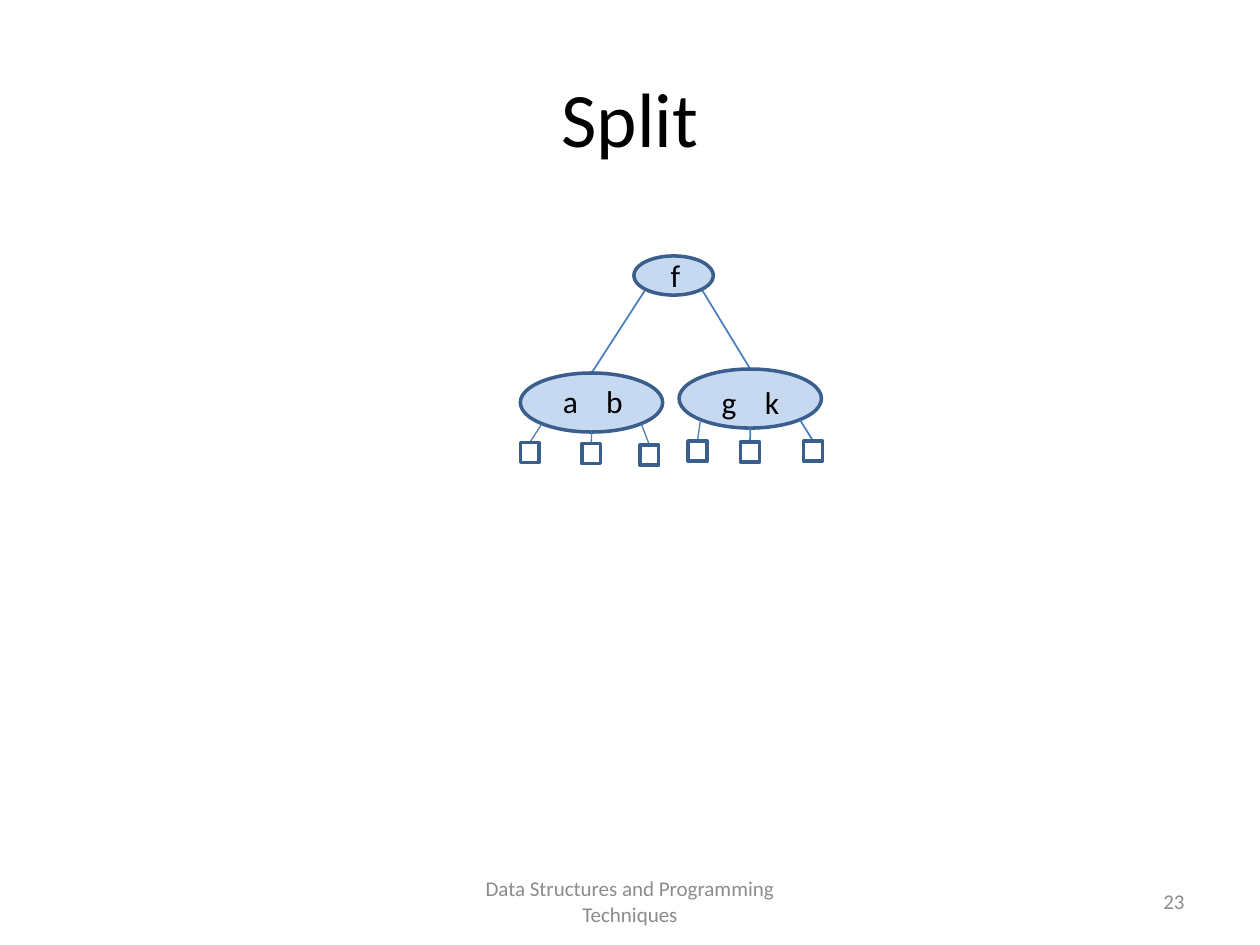
import pptx
import pptx.util
import pptx.dml.color
import pptx.enum.shapes
import pptx.enum.text
import pptx.oxml
import pptx.oxml.ns

Cm = pptx.util.Cm
Pt = pptx.util.Pt
Kind = pptx.enum.shapes.MSO_SHAPE
Side = pptx.enum.text.PP_ALIGN
Mid = pptx.enum.text.MSO_ANCHOR
FILL, RIM, EDGE, GREY = "C6D9F1", "3A5F8C", "4B7EBC", "8C8C8C"
LEAF_W, LEAF_H = 0.38, 0.41
NODE_W, NODE_H = 2.87, 1.19


def color(code):
    """Turn a hex string into a colour."""
    return pptx.dml.color.RGBColor.from_string(code)


def write(slide, text, box, size=18, ink="000000", align=Side.CENTER,
          anchor=Mid.TOP, inset=0.25, tab=None):
    """Place formatted text in a box, with an optional tab stop."""
    frame = slide.shapes.add_textbox(*map(Cm, box)).text_frame
    frame.word_wrap = True
    frame.vertical_anchor = anchor
    frame.margin_left = Cm(inset)
    para = frame.paragraphs[0]
    para.alignment = align
    run = para.add_run()
    run.text = text
    run.font.name = "Calibri"
    run.font.size = Pt(size)
    run.font.color.rgb = color(ink)
    if tab:
        space = pptx.oxml.ns.nsdecls("a")
        stops = f'<a:tabLst {space}><a:tab pos="{Cm(tab)}" algn="l"/></a:tabLst>'
        para._p.get_or_add_pPr().append(pptx.oxml.parse_xml(stops))


def shape(slide, kind, box, fill=None):
    """Draw an outlined shape."""
    item = slide.shapes.add_shape(kind, *map(Cm, box))
    item.shadow.inherit = False
    if fill:
        item.fill.solid()
        item.fill.fore_color.rgb = color(fill)
    else:
        item.fill.background()
    item.line.color.rgb = color(RIM)
    item.line.width = Pt(2)


def edge(slide, start, end, width):
    """Draw a tree edge between two points."""
    kind = pptx.enum.shapes.MSO_CONNECTOR.STRAIGHT
    line = slide.shapes.add_connector(kind, *map(Cm, start + end))
    line.line.color.rgb = color(EDGE)
    line.line.width = Pt(width)
    blank = f'<a:effectLst {pptx.oxml.ns.nsdecls("a")}/>'
    line._element.spPr.append(pptx.oxml.parse_xml(blank))


def node(slide, left, top, keys, drop, leaves, widths):
    """Draw a two-key node with its three leaves."""
    shape(slide, Kind.OVAL, (left, top, NODE_W, NODE_H), FILL)
    ports = ((0.43, 1.03), (NODE_W / 2, NODE_H), (NODE_W - 0.43, 1.03))
    for (px, py), (x, y), width in zip(ports, leaves, widths):
        edge(slide, (left + px, top + py),
             (left + x + LEAF_W / 2, top + y), width)
        shape(slide, Kind.RECTANGLE, (left + x, top + y, LEAF_W, LEAF_H))
    write(slide, "\t".join(keys), (left + 0.36, top + drop, 2.2, 1.02),
          align=Side.LEFT, inset=0.5, tab=0.87)


def tree(slide, left, top):
    """Draw the root and its two children."""
    x, y = left + 2.29, top
    low, high = top + 2.36, top + 2.28
    right = left + 3.2
    edge(slide, (x + 0.23, y + 0.68), (left + NODE_W / 2, low), 1)
    edge(slide, (x + 1.37, y + 0.68), (right + NODE_W / 2, high), 1)
    shape(slide, Kind.OVAL, (x, y, 1.6, 0.79), FILL)
    write(slide, "f", (x + 0.15, y - 0.13, 1.37, 1.02))
    node(slide, left, low, "ab", 0.05,
         ((0, 1.4), (1.24, 1.42), (2.41, 1.45)), (0.75, 0.75, 0.75))
    node(slide, right, high, "gk", 0.15,
         ((0.18, 1.45), (1.24, 1.47), (2.51, 1.45)), (0.75, 1, 1))


def footer(slide, left, top, high):
    """Write the course name and the page number."""
    look = dict(size=12, ink=GREY, anchor=Mid.MIDDLE)
    write(slide, "Data Structures and Programming Techniques",
          (left, top, 8.04, high), **look)
    write(slide, "23", (left + 9.53, top, 5.92, high),
          align=Side.RIGHT, **look)


def main():
    """Build and save the slide."""
    deck = pptx.Presentation()
    deck.slide_width, deck.slide_height = Cm(25.4), Cm(19.05)
    slide = deck.slides.add_slide(deck.slide_layouts[6])
    write(slide, "Split", (1.27, 0.76, 22.86, 3.18), size=44,
          anchor=Mid.MIDDLE)
    tree(slide, 10.49, 5.16)
    footer(slide, 8.68, 17.66, 1.01)
    deck.save("out.pptx")


if __name__ == "__main__":
    main()
